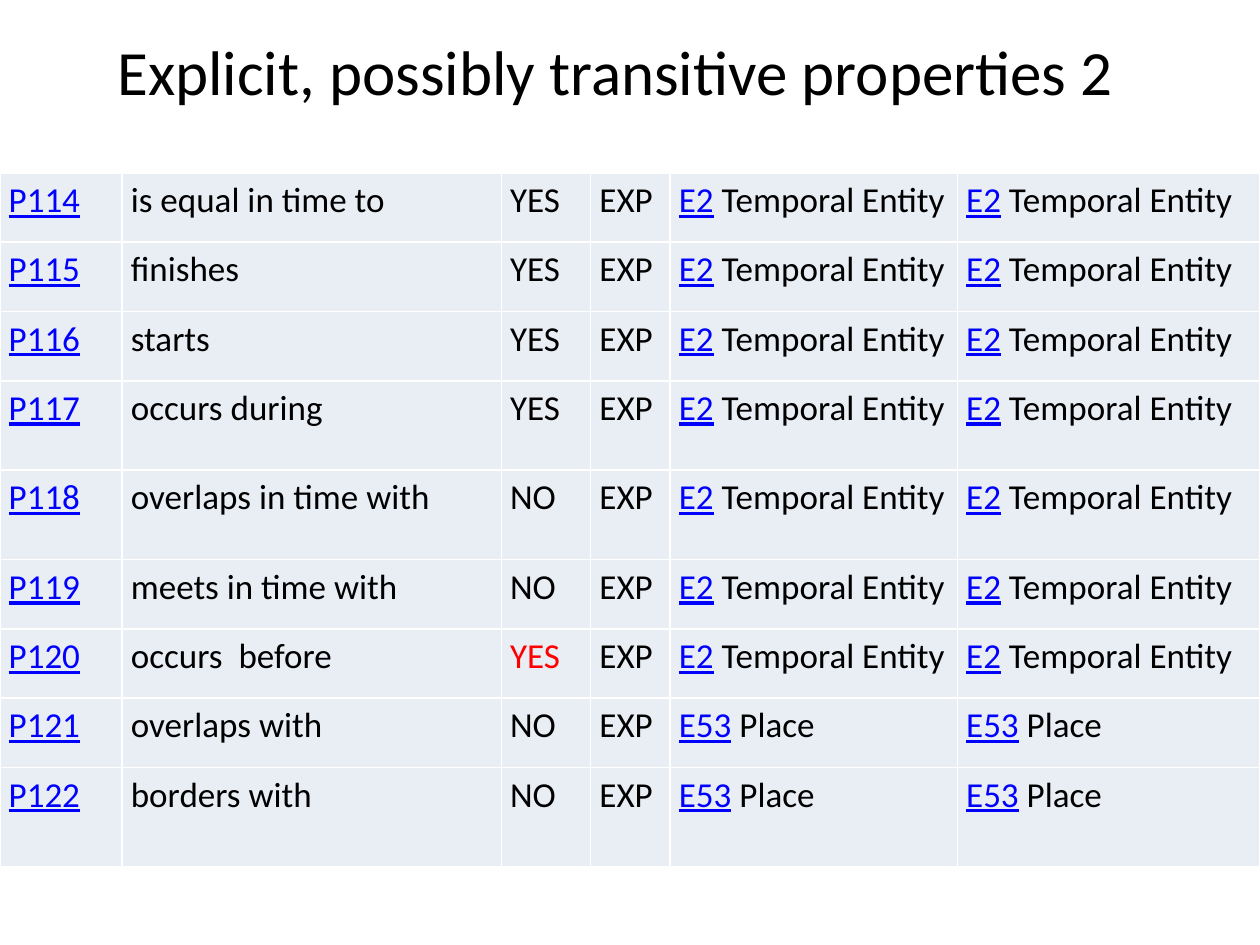
from lxml import etree
from pptx import Presentation
from pptx.dml.color import RGBColor
from pptx.enum.text import MSO_ANCHOR, MSO_AUTO_SIZE, PP_ALIGN
from pptx.oxml.ns import qn
from pptx.util import Pt

LEFT, JUSTIFY = PP_ALIGN.LEFT, PP_ALIGN.JUSTIFY
TOP = MSO_ANCHOR.TOP
FIT_SHAPE = MSO_AUTO_SIZE.SHAPE_TO_FIT_TEXT

# Content
TITLE = "Explicit, possibly transitive properties 2"
TEMPORAL = ("E2", " Temporal Entity")
PLACE = ("E53", " Place")
# code, property name, transitive, class of both domain and range, row height
PROPERTIES = [
    ("P114", "is equal in time to ", "YES", TEMPORAL, 39.6),
    ("P115", "finishes", "YES", TEMPORAL, 39.6),
    ("P116", "starts ", "YES", TEMPORAL, 39.6),
    ("P117", "occurs during", "YES", TEMPORAL, 51.1),
    ("P118", "overlaps in time with", "NO", TEMPORAL, 51.1),
    ("P119", "meets in time with ", "NO", TEMPORAL, 39.6),
    ("P120", "occurs  before", "YES", TEMPORAL, 39.6),
    ("P121", "overlaps with", "NO", PLACE, 39.6),
    ("P122", "borders with", "NO", PLACE, 56.9),
]
FLAGGED = "P120"
KIND = "EXP"

COLORS = {"text": "000000", "link": "0000FF", "flag": "FF0000",
          "cell": "E9EDF4", "border": "FFFFFF"}
FONT = "Calibri"
COLUMN_WIDTHS = [69.8, 216.7, 51.1, 45.4, 164.2, 172.8]
TABLE_TOP = 98.8
CELL_INSET = 5


def add_text(paragraph, text, size=20, color="text", underline=False,
             align=LEFT, spacing=None):
    paragraph.alignment = align
    paragraph.line_spacing = spacing
    run = paragraph.add_run()
    run.text = text
    run.font.name = FONT
    run.font.size = Pt(size)
    run.font.underline = underline
    run.font.color.rgb = RGBColor.from_string(COLORS[color])


def format_cell(cell):
    cell.margin_left = cell.margin_right = Pt(CELL_INSET)
    cell.margin_top = cell.margin_bottom = 0
    properties = cell._tc.get_or_add_tcPr()
    for side in ("a:lnL", "a:lnR", "a:lnT", "a:lnB"):
        line = etree.SubElement(properties, qn(side), w=str(Pt(1)))
        fill = etree.SubElement(line, qn("a:solidFill"))
        etree.SubElement(fill, qn("a:srgbClr"), val=COLORS["border"])
    cell.fill.solid()
    cell.fill.fore_color.rgb = RGBColor.from_string(COLORS["cell"])


def main():
    deck = Presentation()
    deck.slide_width, deck.slide_height = Pt(720), Pt(540)
    slide = deck.slides.add_slide(deck.slide_layouts[5])

    # Title
    title = slide.shapes.title
    title.left, title.top, title.width, title.height = (
        Pt(59.8), Pt(15.1), Pt(589), Pt(51))
    frame = title.text_frame
    frame.word_wrap = False
    frame.auto_size = FIT_SHAPE
    frame.vertical_anchor = TOP
    add_text(frame.paragraphs[0], TITLE, size=36)

    # Table of properties
    heights = [row[-1] for row in PROPERTIES]
    table = slide.shapes.add_table(
        len(PROPERTIES), len(COLUMN_WIDTHS), 0, Pt(TABLE_TOP),
        Pt(sum(COLUMN_WIDTHS)), Pt(sum(heights))).table
    table.first_row = table.horz_banding = False
    for column, width in zip(table.columns, COLUMN_WIDTHS):
        column.width = Pt(width)

    for row, (code, name, transitive, entity, height) in zip(table.rows, PROPERTIES):
        row.height = Pt(height)
        entity_runs = [(entity[0], "link"), (entity[1], "text")]
        transitive_color = "flag" if code == FLAGGED else "text"
        row_runs = [[(code, "link")], [(name, "text")],
                    [(transitive, transitive_color)], [(KIND, "text")],
                    entity_runs, entity_runs]
        for index, (cell, runs) in enumerate(zip(row.cells, row_runs)):
            format_cell(cell)
            for text, color in runs:
                add_text(cell.text_frame.paragraphs[0], text, color=color,
                         underline=color == "link", spacing=1.15,
                         align=JUSTIFY if index == 1 else LEFT)

    deck.save("out.pptx")


if __name__ == "__main__":
    main()
